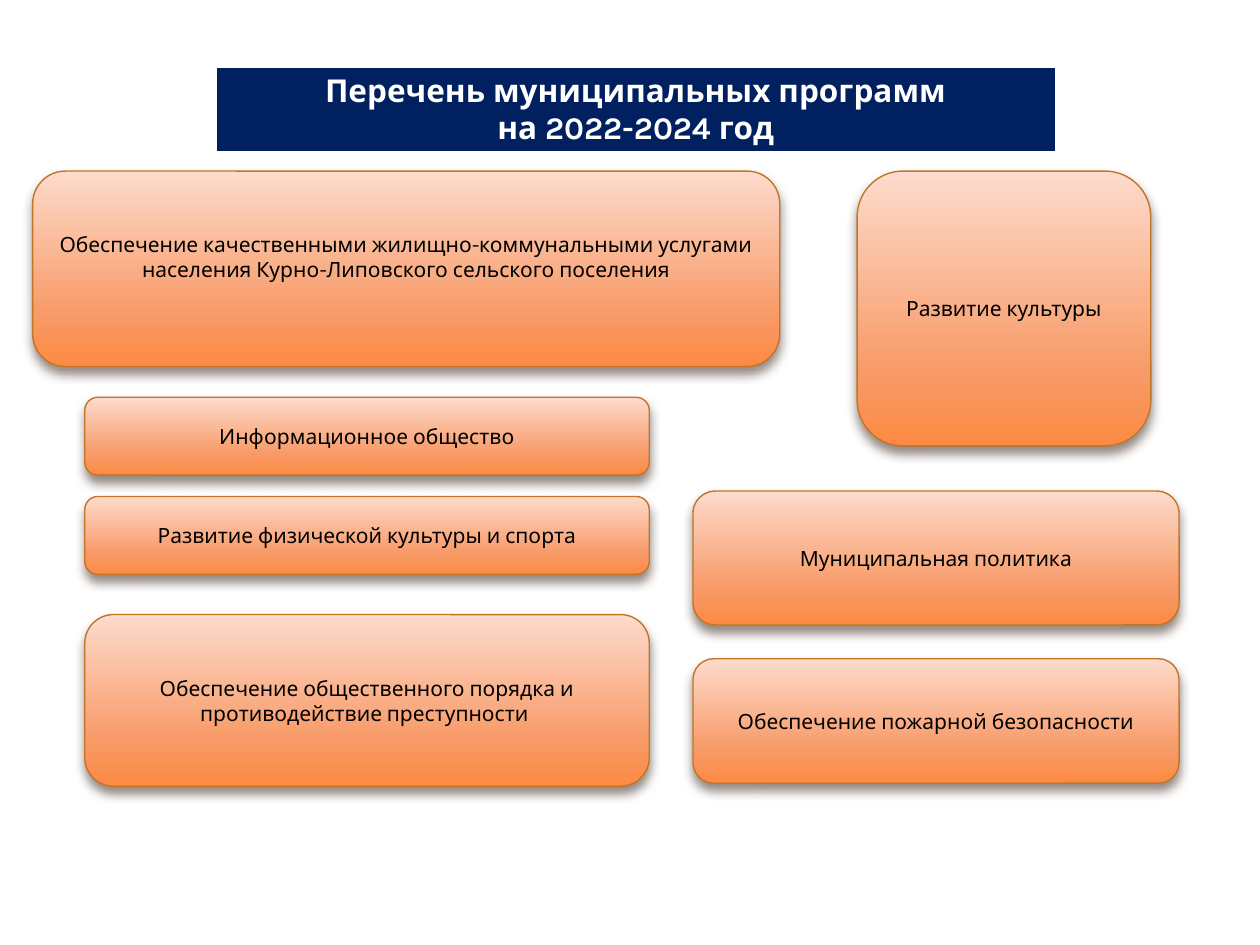
from copy import deepcopy

from lxml.etree import SubElement
from pptx import Presentation
from pptx.dml.color import RGBColor
from pptx.enum.shapes import MSO_SHAPE as Preset
from pptx.enum.text import MSO_ANCHOR as Anchor, PP_ALIGN as Align
from pptx.oxml.ns import qn
from pptx.util import Cm, Pt

WHITE = RGBColor(0xFF, 0xFF, 0xFF)
BLACK = RGBColor(0x00, 0x00, 0x00)
NAVY = RGBColor(0x00, 0x20, 0x60)
PEACH = RGBColor(0xFD, 0xDB, 0xCC)
SALMON = RGBColor(0xF8, 0x9B, 0x69)
ORANGE = RGBColor(0xFC, 0x8A, 0x43)
OUTLINE = RGBColor(0xC1, 0x75, 0x29)
SHADOW = RGBColor(0x4E, 0x3B, 0x30)
GRADIENT = [(0, PEACH), (0.72, SALMON), (1, ORANGE)]
FONT = "Karla"


def style_paragraph(paragraph, size, color, bold=False):
    paragraph.alignment = Align.CENTER
    paragraph.font.name = FONT
    paragraph.font.size = Pt(size)
    paragraph.font.bold = bold
    paragraph.font.color.rgb = color


def add_soft_shadow(card):
    card.shadow.inherit = False
    effects = card._element.spPr.find(qn("a:effectLst"))
    shadow = SubElement(effects, qn("a:outerShdw"), blurRad=str(Pt(6)), dist=str(Pt(4)),
                        dir="5400000", rotWithShape="0")
    tint = SubElement(shadow, qn("a:srgbClr"), val=str(SHADOW))
    SubElement(tint, qn("a:alpha"), val="60000")


prs = Presentation()
prs.slide_width, prs.slide_height = Cm(25.4), Cm(19.05)
slide = prs.slides.add_slide(prs.slide_layouts[6])

heading = slide.shapes.add_table(1, 1, Cm(4.35), Cm(1.35), Cm(16.93), Cm(1.7)).table
heading.horz_banding = False
heading_cell = heading.cell(0, 0)
heading_cell.text = "Перечень муниципальных программ\nна 2022-2024 год"
for line in heading_cell.text_frame.paragraphs:
    style_paragraph(line, 18, WHITE, bold=True)
cell_props = heading_cell._tc.get_or_add_tcPr()
for side, width in [("L", 1), ("R", 1), ("T", 1), ("B", 3)]:
    border = SubElement(cell_props, qn(f"a:ln{side}"), w=str(Pt(width)))
    border_fill = SubElement(border, qn("a:solidFill"))
    SubElement(border_fill, qn("a:srgbClr"), val=str(WHITE))
heading_cell.fill.solid()
heading_cell.fill.fore_color.rgb = NAVY

TOP = 3.45
LEFT, LEFT_WIDTH = 1.71, 11.38
RIGHT, RIGHT_WIDTH = 13.97, 9.8
programs = [
    ("Развитие культуры", 17.28, TOP, 5.92, 5.54, 0.13),
    ("Обеспечение качественными жилищно-коммунальными услугами "
     "населения Курно-Липовского сельского поселения", 0.66, TOP, 15.06, 3.94, 0.61),
    ("Информационное общество", LEFT, 8.01, LEFT_WIDTH, 1.57, 0.13),
    ("Муниципальная политика", RIGHT, 9.9, RIGHT_WIDTH, 2.7, 0.13),
    ("Обеспечение общественного порядка и противодействие преступности ",
     LEFT, 12.39, LEFT_WIDTH, 3.46, 0.13),
    ("Обеспечение пожарной безопасности", RIGHT, 13.28, RIGHT_WIDTH, 2.51, 0.13),
    ("Развитие физической культуры и спорта", LEFT, 10.01, LEFT_WIDTH, 1.57, 0.13),
]

for title, left, top, width, height, bottom_inset in programs:
    card = slide.shapes.add_shape(Preset.ROUNDED_RECTANGLE, Cm(left), Cm(top), Cm(width), Cm(height))
    card.fill.gradient()
    card.fill.gradient_angle = 270
    first_stop = card._element.spPr.find(".//" + qn("a:gs"))
    first_stop.addnext(deepcopy(first_stop))
    for stop, (position, color) in zip(card.fill.gradient_stops, GRADIENT):
        stop.position = position
        stop.color.rgb = color
    card.line.color.rgb = OUTLINE
    card.line.width = Pt(0.79)
    add_soft_shadow(card)

    caption = card.text_frame
    caption.word_wrap = True
    caption.vertical_anchor = Anchor.MIDDLE
    caption.margin_bottom = Cm(bottom_inset)
    caption.text = title
    style_paragraph(caption.paragraphs[0], 12, BLACK)

prs.save("out.pptx")
